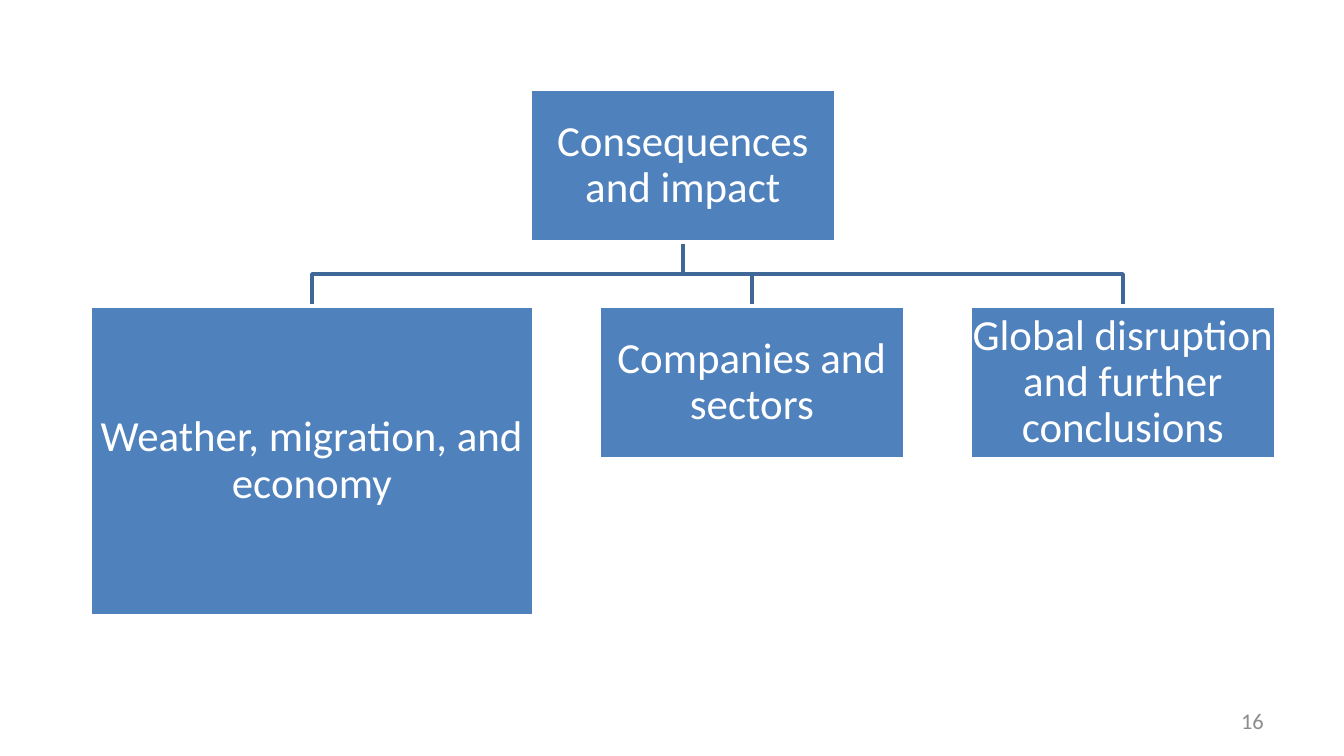
from pptx import Presentation
from pptx.dml.color import RGBColor
from pptx.enum import shapes, text
from pptx.util import Pt

# Content: label, width, height
ROOT = ("Consequences and impact", 306, 153)
BRANCHES = [
    ("Weather, migration, and economy", 444, 310),
    ("Companies and sectors", 306, 153),
    ("Global disruption and further conclusions", 306, 153),
]
PAGE_NUMBER = "16"

# Layout in px
PX = 914400 / 134.4
WIDTH, HEIGHT = 1344, 756
LEFT, GAP = 90, 65
ROOT_TOP, BRANCH_TOP = 89, 306
INSET = 1  # narrow enough for "Global disruption" to stay on one line

FONT = "Calibri"
BLUE = RGBColor(0x4F, 0x81, 0xBD)
DARK_BLUE = RGBColor(0x3F, 0x67, 0x97)
WHITE = RGBColor(0xFF, 0xFF, 0xFF)
GRAY = RGBColor(0x8C, 0x8C, 0x8C)


def emu(*lengths):
    return [round(n * PX) for n in lengths]


def set_text(sp, label, size, color, align):
    tf = sp.text_frame
    tf.word_wrap = True
    tf.vertical_anchor = text.MSO_ANCHOR.MIDDLE
    p = tf.paragraphs[0]
    p.text = label
    p.alignment = align
    font = p.runs[0].font
    font.name, font.size = FONT, Pt(size)
    font.color.rgb = color
    return tf


def add_box(slide, label, x, y, w, h):
    sp = slide.shapes.add_shape(shapes.MSO_SHAPE.RECTANGLE, *emu(x, y, w, h))
    sp.shadow.inherit = False
    sp.fill.solid()
    sp.fill.fore_color.rgb = BLUE
    sp.line.color.rgb = WHITE
    sp.line.width = Pt(2)
    tf = set_text(sp, label, 23, WHITE, text.PP_ALIGN.CENTER)
    tf.margin_left, tf.margin_top, tf.margin_right, tf.margin_bottom = emu(*[INSET] * 4)
    tf.paragraphs[0].line_spacing = 0.9


def add_branch_line(slide, x1, y1, x2, y2):
    middle = (y1 + y2) / 2
    builder = slide.shapes.build_freeform(x1, y1, scale=PX)
    builder.add_line_segments([(x1, middle), (x2, middle), (x2, y2)], close=False)
    sp = builder.convert_to_shape()
    sp.shadow.inherit = False
    sp.fill.background()
    sp.line.color.rgb = DARK_BLUE
    sp.line.width = Pt(2)


prs = Presentation()
prs.slide_width, prs.slide_height = emu(WIDTH, HEIGHT)
slide = prs.slides.add_slide(prs.slide_layouts[6])

# Branches run left to right with equal gaps; the root is centred above them
row_width = sum(w for _, w, _ in BRANCHES) + GAP * (len(BRANCHES) - 1)
center = LEFT + row_width / 2
root_label, root_w, root_h = ROOT
boxes = [(root_label, center - root_w / 2, ROOT_TOP, root_w, root_h)]
x = LEFT
for label, w, h in BRANCHES:
    boxes.append((label, x, BRANCH_TOP, w, h))
    x += w + GAP

# Lines go behind the boxes
for _, x, y, w, _ in reversed(boxes[1:]):
    add_branch_line(slide, center, ROOT_TOP + root_h, x + w / 2, y)
for box in boxes:
    add_box(slide, *box)

# Page number
number = slide.shapes.add_textbox(*emu(964, 701, 313, 40))
set_text(number, PAGE_NUMBER, 12, GRAY, text.PP_ALIGN.RIGHT)

prs.save("out.pptx")
